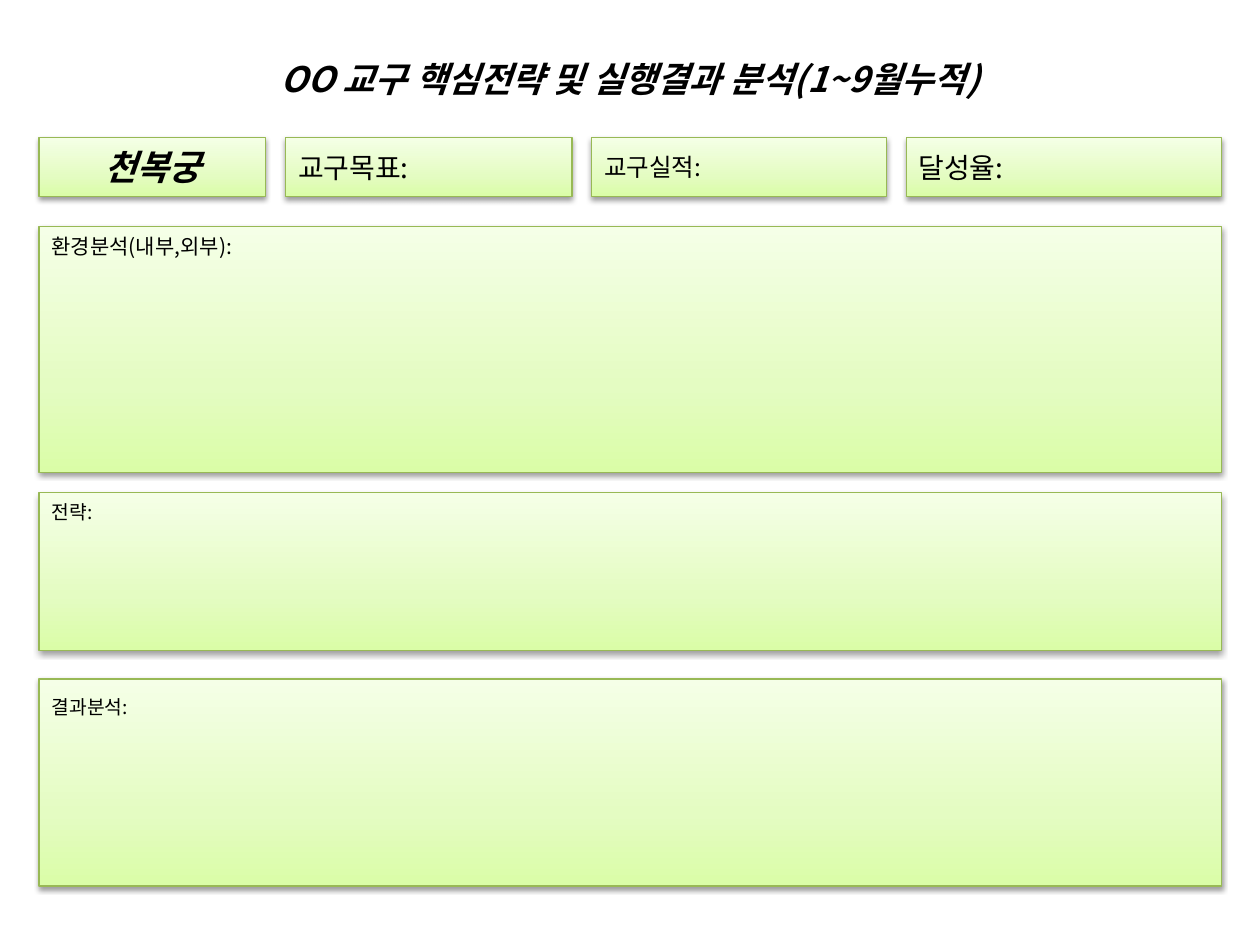
from copy import deepcopy

from lxml import etree
from pptx import Presentation
from pptx.dml.color import RGBColor
from pptx.enum import shapes, text
from pptx.oxml.ns import qn
from pptx.util import Cm, Pt

FONT = "Noto Sans CJK KR"
GRADIENT = [(0, "DAFDA7"), (0.35, "E4FCC2"), (1, "F5FFE7")]
LEFT, WIDTH = 0.79, 23.83
HEADER_GAP = 0.4

# text, width, size, is the name of the parish
HEADERS = [
    ("천복궁", 4.57, 20, True),
    ("교구목표:", 5.77, 16, False),
    ("교구실적:", 5.94, 14, False),
    ("달성율:", 6.35, 16, False),
]
# text, top, height, size, top margin
PANELS = [
    ("환경분석(내부,외부):", 4.57, 4.95, 12, 0.13),
    ("전략:", 9.93, 3.18, 11, 0.15),
    ("결과분석:", 13.69, 4.17, 11, 0.32),
]


def color(hex_string):
    return RGBColor.from_string(hex_string)


def write(shape, words, size, heading=False):
    """Headings are centred, bold and italic; other text is plain and left."""
    frame = shape.text_frame
    frame.word_wrap = True
    frame.vertical_anchor = text.MSO_ANCHOR.MIDDLE
    frame.text = words
    paragraph = frame.paragraphs[0]
    paragraph.alignment = text.PP_ALIGN.CENTER if heading else text.PP_ALIGN.LEFT
    run = paragraph.runs[0]
    run.font.size = Pt(size)
    run.font.bold = run.font.italic = heading
    run.font.color.rgb = color("000000")
    run.font.name = FONT
    etree.SubElement(run.font._element, qn("a:ea"), typeface=FONT)


def fill_gradient(shape):
    shape.fill.gradient()
    stop_list = shape._element.spPr.find(".//" + qn("a:gsLst"))
    stop_list.append(deepcopy(stop_list[-1]))
    for stop, (position, hex_string) in zip(shape.fill.gradient_stops, GRADIENT):
        stop.position = position
        stop.color.rgb = color(hex_string)
    shape.fill.gradient_angle = 90


def add_shadow(shape):
    shape.shadow.inherit = False
    effects = shape._element.spPr.find(qn("a:effectLst"))
    shadow = etree.SubElement(effects, qn("a:outerShdw"), blurRad=str(Pt(3.1)),
                              dist=str(Pt(1.6)), dir="5400000", rotWithShape="0")
    black = etree.SubElement(shadow, qn("a:srgbClr"), val="000000")
    etree.SubElement(black, qn("a:alpha"), val="38000")


def add_box(slide, left, top, width, height):
    box = slide.shapes.add_shape(shapes.MSO_SHAPE.RECTANGLE,
                                 Cm(left), Cm(top), Cm(width), Cm(height))
    fill_gradient(box)
    box.line.color.rgb = color("98B955")
    box.line.width = Pt(0.75)
    add_shadow(box)
    return box


def add_title(slide, left, top, width, height):
    title = slide.shapes.add_textbox(Cm(left), Cm(top), Cm(width), Cm(height))
    write(title, "OO 교구 핵심전략 및 실행결과 분석(1~9월누적)", 20, heading=True)


def add_header_row(slide, left, top, height):
    for words, width, size, heading in HEADERS:
        write(add_box(slide, left, top, width, height), words, size, heading)
        left += width + HEADER_GAP


def add_panels(slide, left, width):
    for words, top, height, size, margin in PANELS:
        panel = add_box(slide, left, top, width, height)
        write(panel, words, size)
        panel.text_frame.vertical_anchor = text.MSO_ANCHOR.TOP
        panel.text_frame.margin_top = Cm(margin)


def main():
    presentation = Presentation()
    presentation.slide_width, presentation.slide_height = Cm(25.4), Cm(19.05)
    slide = presentation.slides.add_slide(presentation.slide_layouts[6])
    add_title(slide, 1.27, 0.79, 22.86, 1.6)
    add_header_row(slide, LEFT, 2.77, 1.19)
    add_panels(slide, LEFT, WIDTH)
    presentation.save("out.pptx")


if __name__ == "__main__":
    main()
